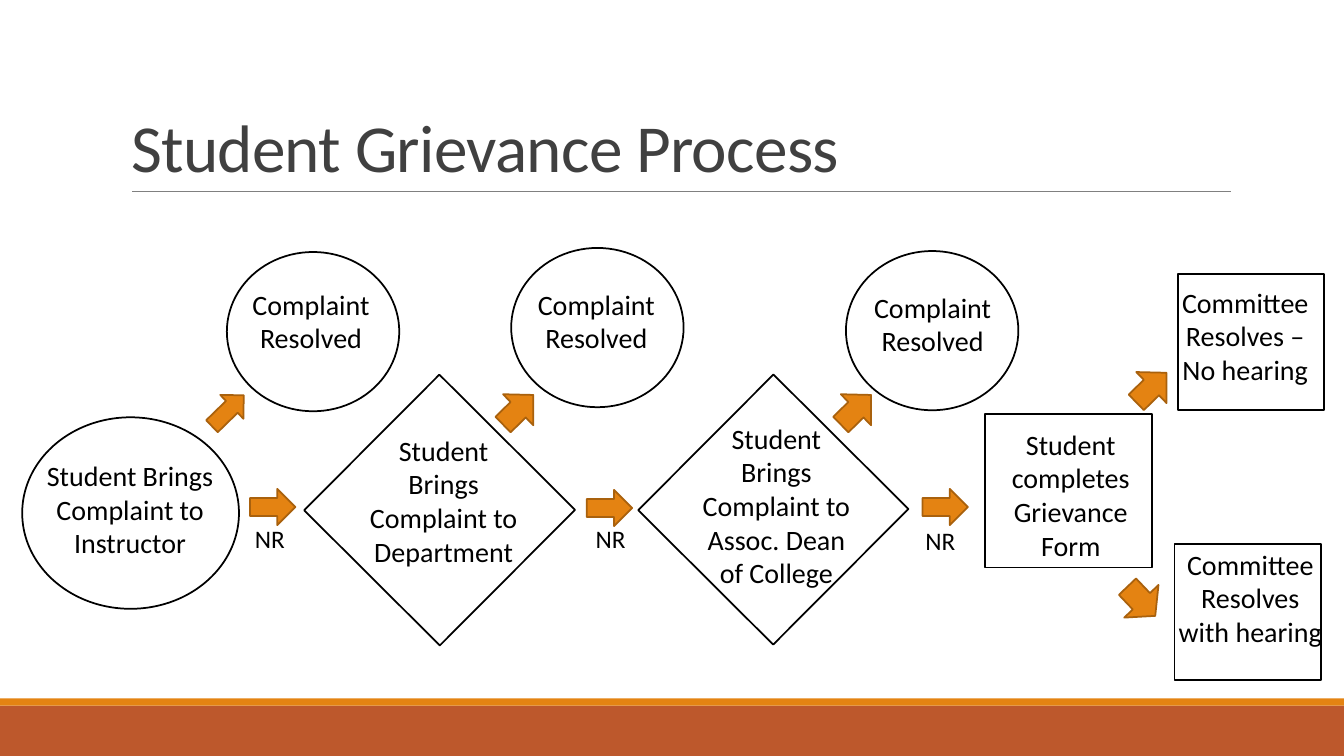
import pptx
import pptx.util
import pptx.dml.color
import pptx.enum.shapes
import pptx.enum.text
from lxml import etree
from pptx.oxml.ns import qn

Inches = pptx.util.Inches
Pt = pptx.util.Pt
SHAPE = pptx.enum.shapes.MSO_SHAPE
ALIGN = pptx.enum.text.PP_ALIGN

FONT = "Calibri"
COLORS = {
    "title": "404040",
    "text": "000000",
    "outline": "000000",
    "rule": "808080",
    "band": "BD582C",
    "accent": "E48312",
    "arrow_edge": "A9610D",
}

# Outlines: kind, left, top, width, height, rotation
STEPS = [
    (SHAPE.OVAL, 0.22, 4.14, 2.15, 1.9, 0),
    (SHAPE.OVAL, 8.39, 2.49, 1.71, 1.58, 0),
    (SHAPE.OVAL, 5.07, 2.46, 1.71, 1.58, 0),
    (SHAPE.OVAL, 2.25, 2.5, 1.71, 1.58, 0),
    (SHAPE.RECTANGLE, 3.41, 4.11, 1.9, 1.9, 314.9),
    (SHAPE.RECTANGLE, 6.72, 4.11, 1.9, 1.89, 314.9),
    (SHAPE.RECTANGLE, 9.77, 4.11, 1.66, 1.52, 0),
    (SHAPE.RECTANGLE, 11.65, 5.4, 1.45, 1.35, 0),
    (SHAPE.RECTANGLE, 11.68, 2.72, 1.45, 1.35, 0),
]

# Step wording: text, left, top, width, height
STEP_LABELS = [
    ("Complaint Resolved", 2.37, 2.8, 1.43, 0.77),
    ("Complaint Resolved", 5.23, 2.8, 1.37, 1.08),
    ("Complaint Resolved", 8.55, 2.83, 1.4, 1.08),
    ("Student Brings Complaint to Instructor", 0.33, 4.5, 1.92, 1.11),
    ("Student Brings Complaint to Department", 3.57, 4.25, 1.66, 1.75),
    ("Student Brings Complaint to Assoc. Dean of College", 6.84, 4.13, 1.72, 1.78),
    ("Student completes Grievance Form", 9.81, 4.19, 1.62, 1.45),
    ("Committee Resolves – No hearing", 11.59, 2.78, 1.52, 1.11),
    ("Committee Resolves with hearing", 11.59, 5.38, 1.62, 1.75),
]

# "Not resolved" marks: left, top
NOT_RESOLVED = [(2.43, 5.14), (5.81, 5.14), (9.08, 5.16)]

# Arrows: left, top, width, height, rotation
ARROWS = [
    (2.48, 4.85, 0.45, 0.36, 0),
    (5.82, 4.86, 0.45, 0.36, 0),
    (9.15, 4.85, 0.45, 0.36, 0),
    (2.04, 3.91, 0.44, 0.33, 315.7),
    (4.93, 3.85, 0.42, 0.43, 315.7),
    (8.28, 3.85, 0.42, 0.43, 315.7),
    (11.21, 3.63, 0.42, 0.43, 315.7),
    (11.12, 5.73, 0.4, 0.47, 46.4),
]


def rgb(name):
    return pptx.dml.color.RGBColor.from_string(COLORS[name])


def add_figure(slide, kind, box, fill=None, line=None, rotation=0):
    figure = slide.shapes.add_shape(kind, *map(Inches, box))
    figure.shadow.inherit = False
    figure.rotation = rotation
    if fill:
        figure.fill.solid()
        figure.fill.fore_color.rgb = rgb(fill)
    else:
        figure.fill.background()
    if line:
        figure.line.color.rgb = rgb(line)
        figure.line.width = Pt(1.25)
    else:
        figure.line.fill.background()


def format_text(paragraph, size, color):
    for run in paragraph.runs:
        run.font.name = FONT
        run.font.size = Pt(size)
        run.font.color.rgb = rgb(color)


def add_label(slide, text, box, size, align, wrap=True):
    label = slide.shapes.add_textbox(*map(Inches, box)).text_frame
    label.word_wrap = wrap
    label.text = text
    label.paragraphs[0].alignment = align
    format_text(label.paragraphs[0], size, "text")


def add_title(slide, text):
    title = slide.shapes.title
    title.left, title.top, title.width, title.height = map(Inches, (1.2, 0.31, 11, 1.59))
    frame = title.text_frame
    frame.text = text
    frame.word_wrap = True
    frame.auto_size = pptx.enum.text.MSO_AUTO_SIZE.NONE
    frame.vertical_anchor = pptx.enum.text.MSO_ANCHOR.BOTTOM
    heading = frame.paragraphs[0]
    heading.alignment = ALIGN.LEFT
    heading.line_spacing = 0.85
    format_text(heading, 48, "title")
    heading.runs[0].font._element.set("spc", "-50")


def add_rule(slide, left, right, top):
    rule = slide.shapes.add_connector(
        pptx.enum.shapes.MSO_CONNECTOR.STRAIGHT,
        Inches(left), Inches(top), Inches(right), Inches(top))
    rule.line.color.rgb = rgb("rule")
    rule.line.width = Pt(0.5)
    etree.SubElement(rule._element.spPr, qn("a:effectLst"))


def main():
    deck = pptx.Presentation()
    deck.slide_width, deck.slide_height = Inches(13.33), Inches(7.5)
    slide = deck.slides.add_slide(deck.slide_layouts.get_by_name("Title Only"))

    # Footer bands, title and its rule
    add_figure(slide, SHAPE.RECTANGLE, (0, 7, 13.33, 0.5), fill="band")
    add_figure(slide, SHAPE.RECTANGLE, (0, 6.93, 13.33, 0.07), fill="accent")
    add_rule(slide, 1.31, 12.21, 1.9)
    add_title(slide, "Student Grievance Process")

    # Process steps
    for kind, *box, rotation in STEPS:
        add_figure(slide, kind, box, line="outline", rotation=rotation)
    for text, *box in STEP_LABELS:
        add_label(slide, text, box, 20, ALIGN.CENTER)

    # Flow between steps
    for *box, rotation in ARROWS:
        add_figure(slide, SHAPE.RIGHT_ARROW, box, "accent", "arrow_edge", rotation)
    for left, top in NOT_RESOLVED:
        add_label(slide, "NR", (left, top, 0.5, 0.4), 18, ALIGN.LEFT, wrap=False)

    deck.save("out.pptx")


if __name__ == "__main__":
    main()
